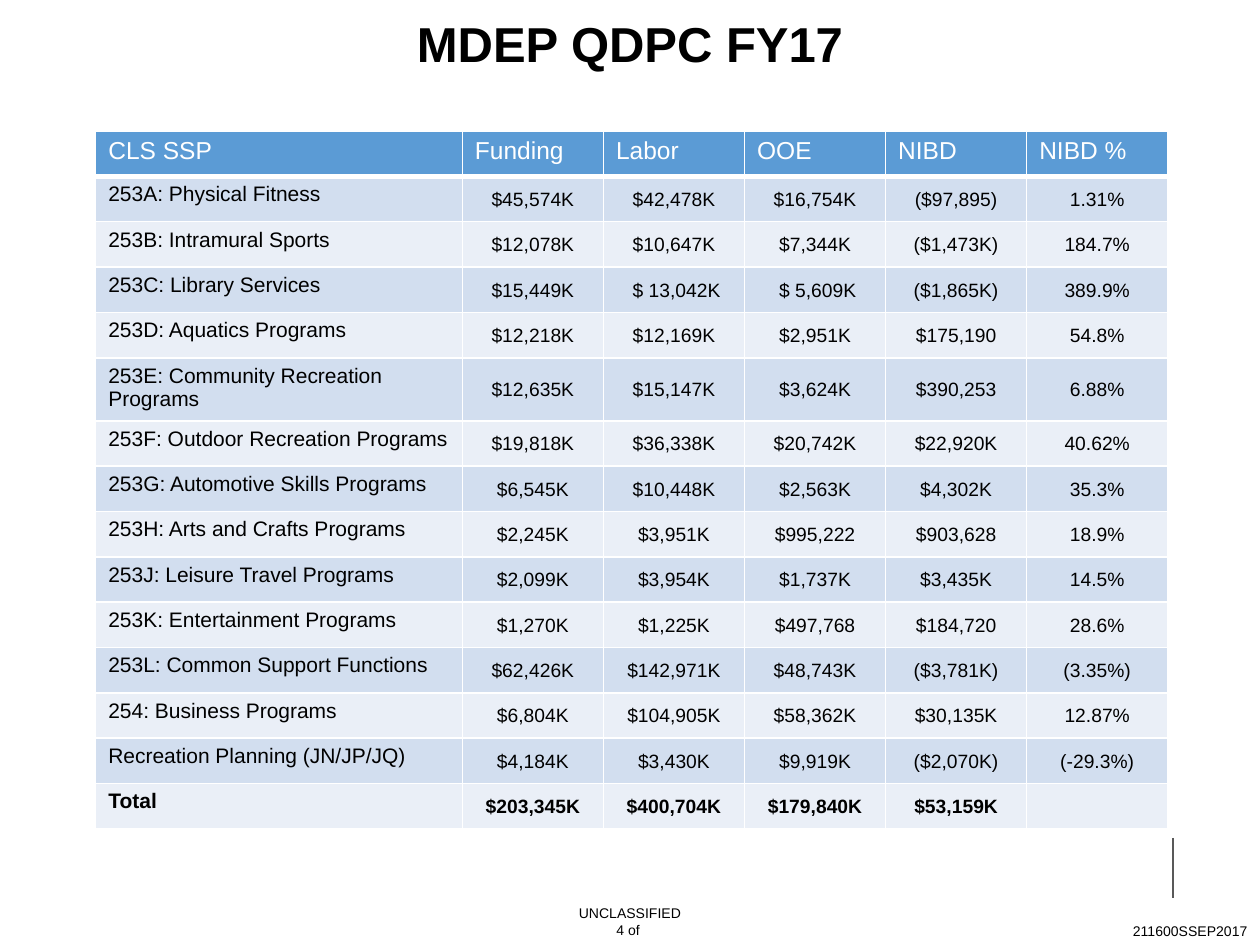
from lxml import etree
from pptx import Presentation
from pptx.dml.color import RGBColor
from pptx.enum.shapes import MSO_CONNECTOR
from pptx.enum.text import MSO_ANCHOR, PP_ALIGN
from pptx.oxml.ns import qn
from pptx.util import Inches, Pt

LEFT, CENTER, RIGHT = PP_ALIGN.LEFT, PP_ALIGN.CENTER, PP_ALIGN.RIGHT
TOP, MIDDLE = MSO_ANCHOR.TOP, MSO_ANCHOR.MIDDLE

TITLE = "MDEP QDPC FY17"
MARKING = "UNCLASSIFIED\n4 of "
DATE_STAMP = "211600SSEP2017"
HEADER = ("CLS SSP", "Funding", "Labor", "OOE", "NIBD", "NIBD %")
PROGRAMS = [
    ("253A: Physical Fitness", "$45,574K", "$42,478K", "$16,754K", "($97,895)", "1.31%"),
    ("253B: Intramural Sports", "$12,078K", "$10,647K", "$7,344K", "($1,473K)", "184.7%"),
    ("253C: Library Services", "$15,449K", " $ 13,042K", " $ 5,609K", "($1,865K)", "389.9%"),
    ("253D: Aquatics Programs", "$12,218K", "$12,169K", "$2,951K", "$175,190", "54.8%"),
    ("253E: Community Recreation Programs", "$12,635K", "$15,147K", "$3,624K", "$390,253", "6.88%"),
    ("253F: Outdoor Recreation Programs", "$19,818K", "$36,338K", "$20,742K", "$22,920K", "40.62%"),
    ("253G: Automotive Skills Programs", "$6,545K", "$10,448K", "$2,563K", "$4,302K", "35.3%"),
    ("253H: Arts and Crafts Programs", "$2,245K", "$3,951K", "$995,222", "$903,628", "18.9%"),
    ("253J: Leisure Travel Programs", "$2,099K", "$3,954K", "$1,737K", "$3,435K", "14.5%"),
    ("253K: Entertainment Programs", "$1,270K", "$1,225K", "$497,768", "$184,720", "28.6%"),
    ("253L: Common Support Functions", "$62,426K", "$142,971K", "$48,743K", "($3,781K)", "(3.35%)"),
    ("254: Business Programs", "$6,804K", "$104,905K", "$58,362K", "$30,135K", "12.87%"),
    ("Recreation Planning (JN/JP/JQ)", "$4,184K", "$3,430K", "$9,919K", "($2,070K)", "(-29.3%)"),
]
TOTAL = ("Total", "$203,345K", "$400,704K", "$179,840K", "$53,159K", "")

THEME = {
    "font": "Arial",
    "ink": "000000", "header_ink": "FFFFFF", "header": "5B9BD5",
    "bands": ("D2DEEF", "EAEFF7"), "border": "FFFFFF", "rule": "595959",
    "title": 28, "heading": 14, "label": 12, "figure": 11, "footer": 8,
}
W, H = 10, 7.5
TABLE_X, TABLE_Y, ROW_H = 0.76, 1.04, 0.36
LABEL_W, FIGURE_W = 2.91, 1.12
FOOTER_W = 2.62


def style(tf, size, align, color="ink", bold=False):
    for p in tf.paragraphs:
        p.alignment = align
        for r in p.runs:
            r.font.name = THEME["font"]
            r.font.size = Pt(size)
            r.font.bold = bold
            r.font.color.rgb = RGBColor.from_string(THEME[color])


def add_text(s, text, x, y, w, h, size, align, bold=False, inset=0.05):
    tf = s.shapes.add_textbox(Inches(x), Inches(y), Inches(w), Inches(h)).text_frame
    tf.word_wrap = True
    tf.margin_top = Inches(inset)
    tf.text = text
    style(tf, size, align, bold=bold)


def set_borders(cell, bottom=1, top=1):
    tc_pr = cell._tc.get_or_add_tcPr()
    for i, (side, width) in enumerate((("L", 1), ("R", 1), ("T", top), ("B", bottom))):
        ln = etree.Element(qn(f"a:ln{side}"), w=str(Pt(width)))
        fill = etree.SubElement(ln, qn("a:solidFill"))
        etree.SubElement(fill, qn("a:srgbClr"), val=THEME["border"])
        tc_pr.insert(i, ln)


def fill_cell(cell, text, row, col, is_total):
    is_header, is_label = row == 0, col == 0
    fill = THEME["header"] if is_header else THEME["bands"][(row - 1) % 2]
    cell.fill.solid()
    cell.fill.fore_color.rgb = RGBColor.from_string(fill)
    set_borders(cell, bottom=3 if is_header else 1, top=3 if row == 1 else 1)
    cell.text_frame.text = text
    if is_header:
        style(cell.text_frame, THEME["heading"], LEFT, "header_ink")
    elif is_label:
        style(cell.text_frame, THEME["label"], LEFT, bold=is_total)
    else:
        style(cell.text_frame, THEME["figure"], CENTER, bold=is_total)
        cell.margin_left = cell.margin_right = cell.margin_top = Inches(0.01)
        cell.margin_bottom = 0
    cell.vertical_anchor = TOP if is_header or is_label else MIDDLE


def add_program_table(s):
    rows = [HEADER, *PROGRAMS, TOTAL]
    widths = [LABEL_W] + [FIGURE_W] * (len(HEADER) - 1)
    table = s.shapes.add_table(
        len(rows), len(widths), Inches(TABLE_X), Inches(TABLE_Y),
        Inches(sum(widths)), Inches(ROW_H * len(rows))).table
    for column, width in zip(table.columns, widths):
        column.width = Inches(width)
    for i, values in enumerate(rows):
        table.rows[i].height = Inches(ROW_H)
        for j, text in enumerate(values):
            fill_cell(table.cell(i, j), text, i, j, values is TOTAL)


def add_rule(s, x, top, bottom):
    line = s.shapes.add_connector(
        MSO_CONNECTOR.STRAIGHT, Inches(x), Inches(top), Inches(x), Inches(bottom))
    line.line.color.rgb = RGBColor.from_string(THEME["rule"])
    line.line.width = Pt(0.75)
    etree.SubElement(line._element.spPr, qn("a:effectLst"))


def main():
    prs = Presentation()
    prs.slide_width, prs.slide_height = Inches(W), Inches(H)
    s = prs.slides.add_slide(prs.slide_layouts[6])
    add_rule(s, 9.31, 6.65, 7.13)
    add_text(s, MARKING, (W - FOOTER_W) / 2, 7.13, FOOTER_W, 0.37, THEME["footer"], CENTER)
    add_text(s, DATE_STAMP, W - FOOTER_W, 7.27, FOOTER_W, 0.24, THEME["footer"], RIGHT)
    add_program_table(s)
    add_text(s, TITLE, 0, 0.01, W, 0.88, THEME["title"], CENTER, bold=True, inset=0.1)
    prs.save("out.pptx")


if __name__ == "__main__":
    main()
